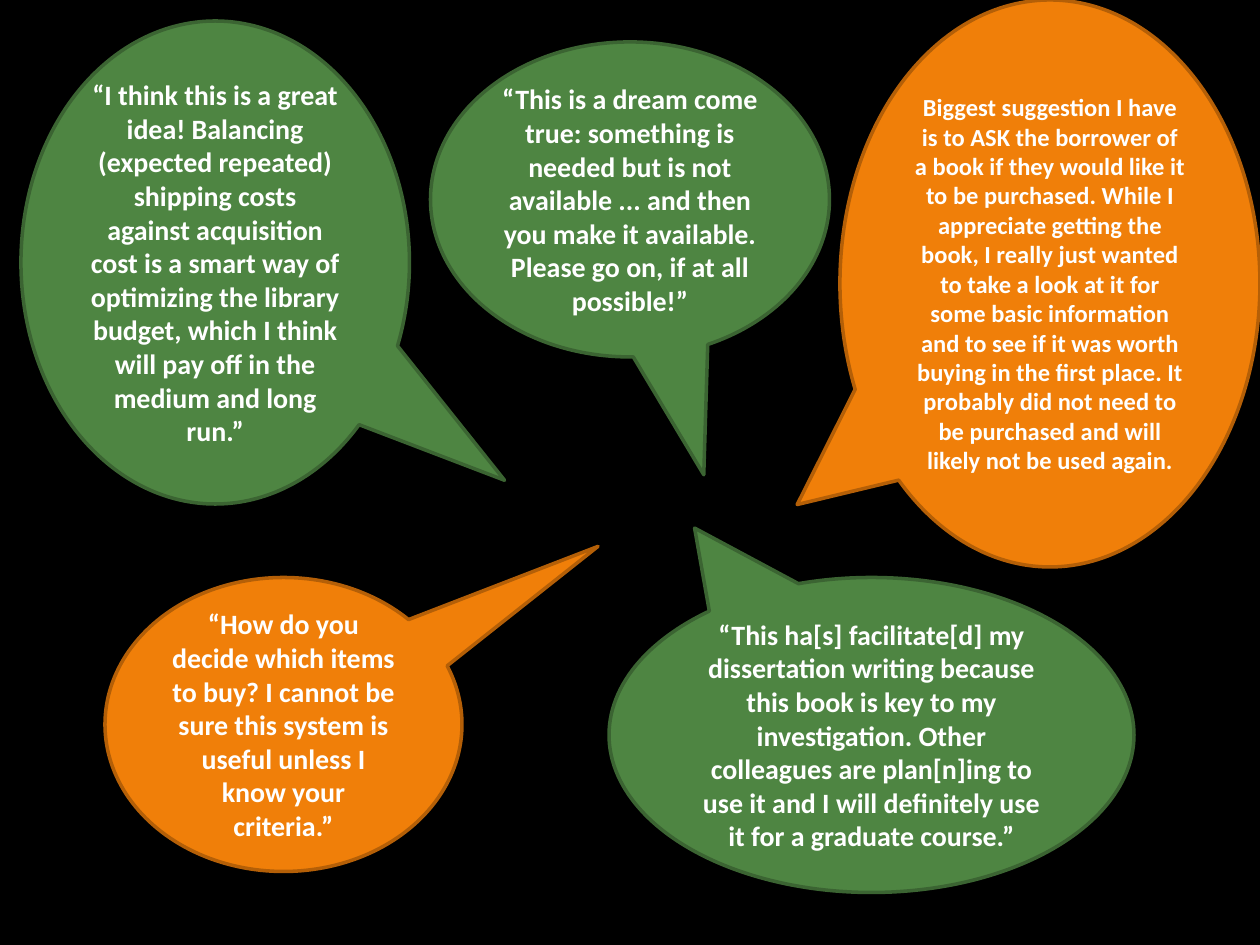
"""Build a slide of five speech bubbles with user feedback on a black background."""
from pptx import Presentation
from pptx.dml.color import RGBColor
from pptx.enum.shapes import MSO_SHAPE
from pptx.enum.text import MSO_ANCHOR, PP_ALIGN
from pptx.util import Pt

COLORS = {
    "background": "000000",
    "text": "FFFFFF",
    "praise": "4E8542",
    "praise_line": "3B6432",
    "concern": "F07F09",
    "concern_line": "B45F07",
}
BUBBLES = [
    ("praise", (12, 12, 222, 276), (0.745, 0.451), 16,
     "“I think this is a great idea! Balancing (expected repeated) shipping costs "
     "against acquisition cost is a smart way of optimizing the library budget, "
     "which I think will pay off in the medium and long run.”"),
    ("concern", (60, 330, 204, 168), (0.881, -0.606), 16,
     "“How do you decide which items to buy? I cannot be sure this system is "
     "useful unless I know your criteria.”"),
    ("praise", (348, 330, 300, 180), (-0.337, -0.657), 16,
     "“This ha[s] facilitate[d] my dissertation writing because this book is key "
     "to my investigation. Other colleagues are plan[n]ing to use it and I will "
     "definitely use it for a graduate course.”"),
    ("praise", (246, 24, 228, 180), (0.185, 0.874), 16,
     "“This is a dream come true: something is needed but is not available ... "
     "and then you make it available. Please go on, if at all possible!”"),
    ("concern", (480, 0, 240, 324), (-0.602, 0.39), 14,
     "Biggest suggestion I have is to ASK the borrower of a book if they would "
     "like it to be purchased. While I appreciate getting the book, I really just "
     "wanted to take a look at it for some basic information and to see if it was "
     "worth buying in the first place. It probably did not need to be purchased "
     "and will likely not be used again."),
]


def rgb(name):
    return RGBColor.from_string(COLORS[name])


prs = Presentation()
prs.slide_width, prs.slide_height = Pt(720), Pt(540)
s = prs.slides.add_slide(prs.slide_layouts[6])
s.background.fill.solid()
s.background.fill.fore_color.rgb = rgb("background")

for kind, box, tail, size, quote in BUBBLES:
    sp = s.shapes.add_shape(MSO_SHAPE.OVAL_CALLOUT, *map(Pt, box))
    sp.adjustments[0], sp.adjustments[1] = tail
    sp.shadow.inherit = False
    sp.fill.solid()
    sp.fill.fore_color.rgb = rgb(kind)
    sp.line.color.rgb = rgb(f"{kind}_line")
    sp.line.width = Pt(2)
    tf = sp.text_frame
    tf.word_wrap = True
    tf.vertical_anchor = MSO_ANCHOR.MIDDLE
    p = tf.paragraphs[0]
    p.alignment = PP_ALIGN.CENTER
    r = p.add_run()
    r.text = quote
    r.font.name = "Calibri"
    r.font.size = Pt(size)
    r.font.bold = True
    r.font.color.rgb = rgb("text")

prs.save("out.pptx")
